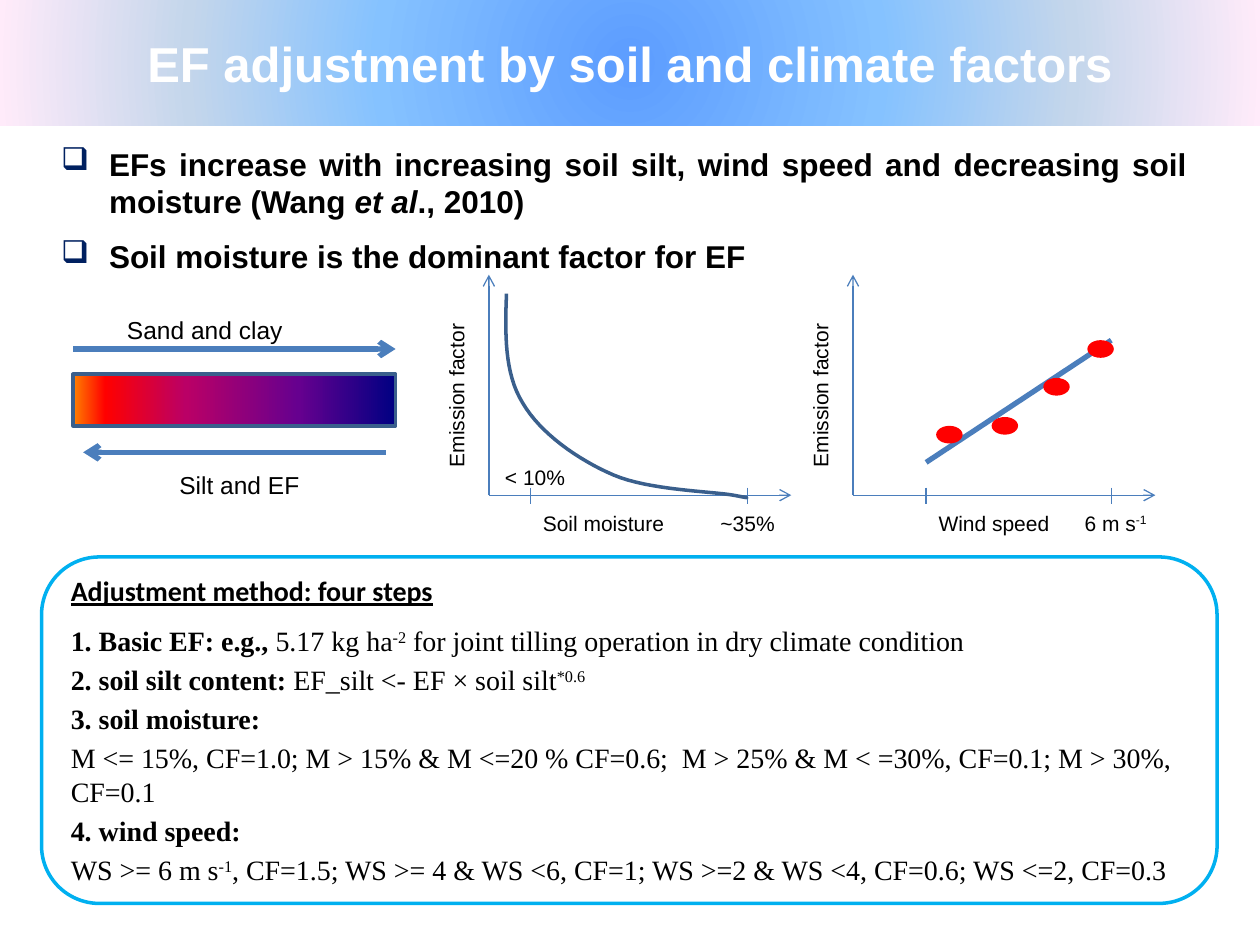
from pptx import Presentation
from pptx.dml.color import RGBColor
from pptx.enum.shapes import MSO_CONNECTOR, MSO_SHAPE
from pptx.enum.text import MSO_ANCHOR, MSO_AUTO_SIZE, PP_ALIGN
from pptx.oxml import parse_xml
from pptx.oxml.ns import nsdecls, qn
from pptx.util import Inches, Pt

BLUE, DARK_BLUE, RED = "4B7EBC", "3A5F8C", "FF0000"
CURVE_START = (4.02, 2.33)
CURVE = [  # two control points and an end point for each cubic piece
    ((4.01, 2.64), (4.0, 2.96), (4.15, 3.2)),
    ((4.29, 3.44), (4.59, 3.65), (4.87, 3.77)),
    ((5.15, 3.89), (5.65, 3.9), (5.82, 3.93)),
    ((5.98, 3.96), (5.93, 3.95), (5.87, 3.94)),
]

# Each paragraph is a list of (text, style): b bold, i italic, u underlined, ^ raised
BULLETS = [
    [("EFs increase with increasing soil silt, wind speed and decreasing soil moisture (Wang ", "b"),
     ("et al", "bi"), ("., 2010)", "b")],
    [("Soil moisture is the dominant factor for EF", "b")],
]
STEPS = [
    [("Adjustment method: four steps", "bu")],
    [("1. Basic EF: e.g., ", "b"), ("5.17 kg ha", ""), ("-2", "^"),
     (" for joint tilling operation in dry climate condition", "")],
    [("2. soil silt content: ", "b"), ("EF_silt <- EF × soil silt", ""), ("*0.6", "^")],
    [("3. soil moisture:", "b")],
    [("M <= 15%, CF=1.0; M > 15% & M <=20 % CF=0.6;  M > 25% & M < =30%, CF=0.1; M > 30%, CF=0.1", "")],
    [("4. wind speed:", "b")],
    [("WS >= 6 m s", ""), ("-1", "^"),
     (", CF=1.5; WS >= 4 & WS <6, CF=1; WS >=2 & WS <4, CF=0.6; WS <=2, CF=0.3", "")],
]


def color(value):
    return RGBColor.from_string(value)


def fill_gradient(shape, stops, direction):
    shape.fill.solid()
    stop_xml = "".join(
        f'<a:gs pos="{position * 1000}"><a:srgbClr val="{value}"/></a:gs>' for position, value in stops)
    gradient = parse_xml(f'<a:gradFill {nsdecls("a")} rotWithShape="1">'
                         f'<a:gsLst>{stop_xml}</a:gsLst>{direction}</a:gradFill>')
    properties = shape._element.spPr
    properties.replace(properties.find(qn("a:solidFill")), gradient)


def add_shape(page, kind, frame, fill=None, line=None):
    shape = page.shapes.add_shape(kind, *map(Inches, frame))
    shape.shadow.inherit = False
    if fill:
        shape.fill.solid()
        shape.fill.fore_color.rgb = color(fill)
    else:
        shape.fill.background()
    if line:
        shape.line.color.rgb = color(line)
        shape.line.width = Pt(2)
    else:
        shape.line.fill.background()
    return shape


def add_line(page, start, end, width=0.75, arrow=False):
    line = page.shapes.add_connector(MSO_CONNECTOR.STRAIGHT, *map(Inches, start + end))
    line.line.color.rgb = color(BLUE)
    line.line.width = Pt(width)
    if arrow:
        line.line._get_or_add_ln().append(parse_xml(f'<a:tailEnd {nsdecls("a")} type="arrow"/>'))
    line._element.spPr.append(parse_xml(f'<a:effectLst {nsdecls("a")}/>'))


def write_runs(para, spans, size, font="Arial", tint="000000"):
    for text, style in spans:
        span = para.add_run()
        span.text = text
        span.font.name, span.font.size = font, Pt(size)
        span.font.color.rgb = color(tint)
        span.font.bold, span.font.italic = "b" in style, "i" in style
        span.font.underline = "u" in style
        if "^" in style:
            span.font._element.set("baseline", "30000")


def add_label(page, frame, spans, size=12, align=PP_ALIGN.LEFT, rotation=0):
    box = page.shapes.add_textbox(*map(Inches, frame))
    box.rotation = rotation
    box.text_frame.word_wrap = True
    para = box.text_frame.paragraphs[0]
    para.alignment = align
    write_runs(para, spans, size)


def write_paragraphs(shape, paragraphs, size, fonts):
    frame = shape.text_frame
    frame.word_wrap = True
    frame.vertical_anchor = MSO_ANCHOR.MIDDLE
    for index, spans in enumerate(paragraphs):
        para = frame.paragraphs[0] if index == 0 else frame.add_paragraph()
        para.alignment = PP_ALIGN.LEFT
        para.space_before = Pt(size * 0.2)
        write_runs(para, spans, size, fonts[min(index, len(fonts) - 1)])
    return frame.paragraphs


def add_title(page):
    title = page.shapes.title
    title.left, title.top, title.width, title.height = map(Inches, (0, 0, 10, 1))
    fill_gradient(title, [(2, "5E9EFF"), (40, "85C2FF"), (70, "C4D6EB"), (100, "FFEBFA")],
                  '<a:path path="circle"><a:fillToRect l="50000" t="50000" r="50000" b="50000"/></a:path>')
    title.text_frame.auto_size = MSO_AUTO_SIZE.NONE
    title.text_frame.vertical_anchor = MSO_ANCHOR.MIDDLE
    para = title.text_frame.paragraphs[0]
    para.alignment = PP_ALIGN.CENTER
    write_runs(para, [("EF adjustment by soil and climate factors", "b")], 28, tint="FFFFFF")


def add_bullets(page):
    box = add_shape(page, MSO_SHAPE.ROUNDED_RECTANGLE, (0.33, 1.08, 9.25, 1.17))
    for para in write_paragraphs(box, BULLETS, 18, ["Arial"]):
        para.alignment = PP_ALIGN.JUSTIFY
        para.space_after = Pt(6)
        properties = para._p.get_or_add_pPr()
        properties.set("marL", str(Inches(0.38)))
        properties.set("indent", str(-Inches(0.38)))
        properties.append(parse_xml(f'<a:buClr {nsdecls("a")}><a:srgbClr val="002060"/></a:buClr>'))
        properties.append(parse_xml(f'<a:buChar {nsdecls("a")} char="❑"/>'))


def add_soil_scale(page):
    bar = add_shape(page, MSO_SHAPE.RECTANGLE, (0.58, 2.97, 2.56, 0.41), line=DARK_BLUE)
    fill_gradient(bar, [(0, "000082"), (30, "66008F"), (65, "BA0066"), (90, RED), (100, "FF8200")],
                  '<a:lin ang="10800000" scaled="0"/>')
    add_line(page, (0.58, 2.77), (3.14, 2.77), 3, arrow=True)
    add_label(page, (0.91, 2.45, 1.9, 0.27), [("Sand and clay", "")], 14)
    add_line(page, (3.06, 3.59), (0.66, 3.59), 3, arrow=True)
    add_label(page, (0.95, 3.68, 1.9, 0.27), [("Silt and EF", "")], 14, PP_ALIGN.CENTER)


def add_axes(page, left, name, name_left, ticks, limit):
    base = 3.93
    add_line(page, (left, base), (left + 2.4, base), arrow=True)
    add_line(page, (left, base), (left, 2.18), arrow=True)
    for tick in ticks:
        add_line(page, (tick, 3.87), (tick, 4))
    add_label(page, (left - 1.01, 2.99, 1.5, 0.3), [("Emission factor", "")],
              align=PP_ALIGN.CENTER, rotation=270)
    add_label(page, (name_left, 4, 1.25, 0.25), [(name, "")])
    add_label(page, (ticks[-1] - 0.31, 4, 0.74, 0.25), limit)


def bezier_points(start, pieces, steps=16):
    for first, second, end in pieces:
        for step in range(1, steps + 1):
            t = step / steps
            u = 1 - t
            yield tuple(Inches(u**3 * a + 3 * u * u * t * b + 3 * u * t * t * c + t**3 * d)
                        for a, b, c, d in zip(start, first, second, end))
        start = end


def add_moisture_graph(page):
    add_axes(page, 3.88, "Soil moisture", 4.21, (4.21, 5.93), [("~35%", "")])
    builder = page.shapes.build_freeform(*map(Inches, CURVE_START))
    builder.add_line_segments(list(bezier_points(CURVE_START, CURVE)), close=False)
    curve = builder.convert_to_shape()
    curve.shadow.inherit = False
    curve.fill.background()
    curve.line.color.rgb = color(DARK_BLUE)
    curve.line.width = Pt(2)
    add_label(page, (3.91, 3.64, 0.74, 0.25), [("< 10%", "")])


def add_wind_graph(page):
    add_axes(page, 6.77, "Wind speed", 7.35, (7.35, 8.82), [("6 m s", ""), ("-1", "^")])
    add_line(page, (7.35, 3.67), (8.82, 2.7), 3)
    for left, top in ((8.63, 2.7), (8.28, 3), (7.43, 3.38), (7.87, 3.31)):
        add_shape(page, MSO_SHAPE.OVAL, (left, top, 0.21, 0.14), RED)


def add_steps(page):
    box = add_shape(page, MSO_SHAPE.ROUNDED_RECTANGLE, (0.33, 4.42, 9.33, 2.75), "FFFFFF", "00B0F0")
    heading = write_paragraphs(box, STEPS, 16, ["Calibri", "Times New Roman"])[0]
    heading.alignment = PP_ALIGN.JUSTIFY
    heading.space_after = Pt(6)


def main():
    deck = Presentation()
    deck.slide_width, deck.slide_height = Inches(10), Inches(7.5)
    page = deck.slides.add_slide(deck.slide_layouts[5])
    add_title(page)
    add_bullets(page)
    add_soil_scale(page)
    add_moisture_graph(page)
    add_wind_graph(page)
    add_steps(page)
    deck.save("out.pptx")


if __name__ == "__main__":
    main()
